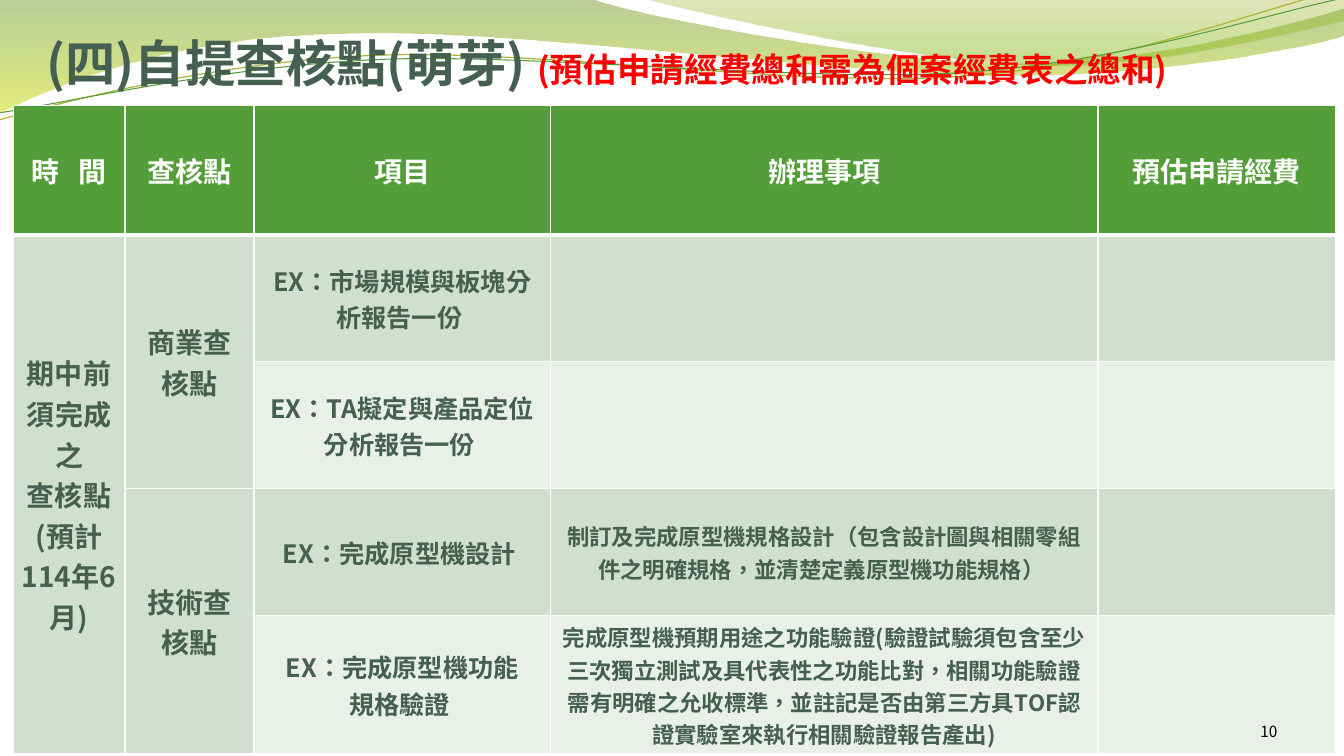
import pptx
import pptx.dml.color
import pptx.enum.lang
import pptx.enum.text
import pptx.oxml.ns
import pptx.util
from lxml import etree

Inches = pptx.util.Inches
Pt = pptx.util.Pt
RGBColor = pptx.dml.color.RGBColor
ALIGN = pptx.enum.text.PP_ALIGN
ANCHOR = pptx.enum.text.MSO_ANCHOR
LANGUAGE = pptx.enum.lang.MSO_LANGUAGE_ID.TRADITIONAL_CHINESE
qn = pptx.oxml.ns.qn

WHITE = RGBColor(0xFF, 0xFF, 0xFF)
BLACK = RGBColor(0, 0, 0)
RED = RGBColor(0xFF, 0, 0)
SLATE = RGBColor(0x45, 0x5F, 0x51)
GREEN = RGBColor(0x54, 0x9E, 0x39)
OLIVE = RGBColor(0xA9, 0xB7, 0x33)
BAND_DARK = RGBColor(0xD1, 0xDF, 0xCE)
BAND_LIGHT = RGBColor(0xE9, 0xF0, 0xE8)
LEAF = RGBColor(0x69, 0x92, 0x1C)
LIME = RGBColor(0xCC, 0xE1, 0x0F)
MOSS = RGBColor(0x9B, 0xAA, 0x1A)
GRASS = RGBColor(0x81, 0xBA, 0x16)

TC_FONT = "Noto Sans CJK TC"
SC_FONT = "Noto Sans CJK SC"

# Outlines: a pair is a line end, a group of six is a Bezier segment.
LEFT_WAVE = [(0, 0), (5.87, -0.01), (6.34, 0.17, 8.84, 0.63, 10.11, 0.63),
             (11.37, 0.63, 12.77, 0.26, 13.33, 0.09), (13.34, 0.36),
             (13.11, 0.44, 11.59, 0.76, 9.94, 0.75),
             (8.29, 0.75, 5.09, 0.28, 3.43, 0.34),
             (1.72, 0.36, 0.61, 0.83, -0.02, 1.13)]
RIGHT_WAVE = [(6.38, -0.01), (6.79, 0.11, 9.09, 0.62, 10.25, 0.65),
              (11.4, 0.69, 12.82, 0.32, 13.33, 0.21), (13.33, 0)]
OLIVE_STRAND = [(-0.01, 1.19), (0.63, 1.01, 2.1, 0.62, 3.69, 0.55),
                (5.27, 0.48, 7.89, 0.87, 9.49, 0.76),
                (11.1, 0.66, 12.51, 0.08, 13.3, -0.1)]
GREEN_STRAND = [(-0.01, 1.12), (0.62, 1.03, 2.18, 0.66, 3.77, 0.59),
                (5.37, 0.53, 7.96, 0.82, 9.55, 0.72),
                (11.14, 0.62, 12.55, 0.14, 13.33, -0.02)]

COLUMN_WIDTHS = [1.11, 1.28, 2.94, 5.43, 2.36]
ROW_HEIGHTS = [1.28, 1.26, 1.26, 1.26, 1.37]
MERGES = [(1, 0, 4, 0), (1, 1, 2, 1), (3, 1, 4, 1)]
COLUMN_SIZES = [20, 20, 18, 16, 18]
COLUMN_INSETS = [(0.07, 0), (0.1, 0)] + [(0.1, 0.05)] * 3
ROWS = [
    ["時 間", "查核點", "項目", "辦理事項", "預估申請經費"],
    ["期中前\n須完成之\n查核點\n(預計114年6月)", "商業查核點",
     "EX：市場規模與板塊分析報告一份 ", "", ""],
    ["", "", "EX：TA擬定與產品定位分析報告一份 ", "", ""],
    ["", "技術查核點", "EX：完成原型機設計 ",
     "制訂及完成原型機規格設計（包含設計圖與相關零組件之明確規格，並清楚定義原型機功能規格） ", ""],
    ["", "", "EX：完成原型機功能\n規格驗證 ",
     "完成原型機預期用途之功能驗證(驗證試驗須包含至少三次獨立測試及具代表性之功能比對，"
     "相關功能驗證需有明確之允收標準，並註記是否由第三方具TOF認證實驗室來執行相關驗證報告產出)", ""],
]


def set_attributes(target, values):
    for name, value in values.items():
        setattr(target, name, value)


def margins(left, top, right, bottom):
    sides = zip(("left", "top", "right", "bottom"), (left, top, right, bottom))
    return {f"margin_{side}": Inches(value) for side, value in sides}


class SlideBuilder:
    def __init__(self, presentation):
        self.slide = presentation.slides.add_slide(presentation.slide_layouts[6])

    def outline(self, outline, closed):
        """Draw through all points, then join each group of three into a curve."""
        points = [(round(segment[i] * 100), round(segment[i + 1] * 100))
                  for segment in outline for i in range(0, len(segment), 2)]
        builder = self.slide.shapes.build_freeform(*points[0], scale=Inches(0.01))
        builder.add_line_segments(points[1:], close=closed)
        shape = builder.convert_to_shape()
        shape.shadow.inherit = False
        line_ends = iter(list(shape.element.iter(qn("a:lnTo"))))
        for segment in outline[1:]:
            line = next(line_ends)
            if len(segment) == 6:
                line.addprevious(curve := etree.Element(qn("a:cubicBezTo")))
                for part in (line, next(line_ends), next(line_ends)):
                    curve.append(part[0])
                    part.getparent().remove(part)
        return shape

    def wave(self, outline, stops):
        """Filled outline; each stop is position, colour and opacity in percent."""
        shape = self.outline(outline, True)
        shape.line.fill.background()
        shape.fill.gradient()
        shape.fill.gradient_angle = 270
        stop_list = shape.element.spPr.find(qn("a:gradFill")).find(qn("a:gsLst"))
        for stop, (position, color, opacity) in zip(stop_list, stops):
            stop.set("pos", str(position * 1000))
            for child in list(stop):
                stop.remove(child)
            color_element = etree.SubElement(stop, qn("a:srgbClr"), val=str(color))
            etree.SubElement(color_element, qn("a:alpha"), val=str(opacity * 1000))

    def strand(self, outline, color, width):
        shape = self.outline(outline, False)
        shape.fill.background()
        shape.line.color.rgb = color
        shape.line.width = Pt(width)

    def run(self, paragraph, text, size, color, font=SC_FONT, bold=True):
        run = paragraph.add_run()
        run.text = text
        set_attributes(run.font, {"size": Pt(size), "bold": bold, "name": font,
                                  "language_id": LANGUAGE})
        run.font.color.rgb = color
        east_asian = etree.SubElement(run.font._element, qn("a:ea"))
        east_asian.set("typeface", font)
        return run

    def text(self, box, runs, align, top_margin=0):
        shape = self.slide.shapes.add_textbox(*(Inches(value) for value in box))
        frame = shape.text_frame
        set_attributes(frame, {"word_wrap": True, "vertical_anchor": ANCHOR.BOTTOM,
                               **margins(0, top_margin, 0, 0)})
        paragraph = frame.paragraphs[0]
        paragraph.alignment = align
        for values in runs:
            self.run(paragraph, *values)

    def borders(self, cell, widths):
        properties = cell._tc.get_or_add_tcPr()
        for side, width in zip("LRTB", widths):
            line = etree.SubElement(properties, qn(f"a:ln{side}"), w=str(Pt(width)))
            fill = etree.SubElement(line, qn("a:solidFill"))
            etree.SubElement(fill, qn("a:srgbClr"), val=str(WHITE))

    def cell(self, cell, row, column):
        is_header = row == 0
        self.borders(cell, (1, 1, 3 if row == 1 else 1, 3 if is_header else 1))
        cell.fill.solid()
        if is_header:
            cell.fill.fore_color.rgb = GREEN
        else:
            cell.fill.fore_color.rgb = BAND_DARK if column < 2 or row % 2 else BAND_LIGHT
        set_attributes(cell, {"vertical_anchor": ANCHOR.MIDDLE,
                              **margins(*COLUMN_INSETS[column] * 2)})
        if not ROWS[row][column]:
            return
        for index, line in enumerate(ROWS[row][column].split("\n")):
            frame = cell.text_frame
            paragraph = frame.add_paragraph() if index else frame.paragraphs[0]
            paragraph.alignment = ALIGN.CENTER
            run = self.run(paragraph, line, 20 if is_header else COLUMN_SIZES[column],
                           WHITE if is_header else SLATE)
            if is_header and column == 0:
                run.font._element.set("spc", "450")

    def table(self, left, top):
        box = (left, top, sum(COLUMN_WIDTHS), sum(ROW_HEIGHTS))
        table = self.slide.shapes.add_table(
            len(ROWS), len(COLUMN_WIDTHS), *(Inches(value) for value in box)).table
        for column, width in zip(table.columns, COLUMN_WIDTHS):
            column.width = Inches(width)
        for row, height in zip(table.rows, ROW_HEIGHTS):
            row.height = Inches(height)
        for first_row, first_column, last_row, last_column in MERGES:
            table.cell(first_row, first_column).merge(table.cell(last_row, last_column))
        for row in range(len(ROWS)):
            for column in range(len(COLUMN_WIDTHS)):
                self.cell(table.cell(row, column), row, column)


def main():
    presentation = pptx.Presentation()
    set_attributes(presentation, {"slide_width": Inches(13.33), "slide_height": Inches(7.5)})
    builder = SlideBuilder(presentation)
    builder.wave(LEFT_WAVE, [(0, LEAF, 45), (100, LIME, 55)])
    builder.wave(RIGHT_WAVE, [(0, MOSS, 30), (80, GRASS, 45)])
    builder.strand(OLIVE_STRAND, OLIVE, 0.85)
    builder.strand(GREEN_STRAND, GREEN, 0.75)
    builder.text((0.46, 0.15, 12, 0.77),
                 [("(四)自提查核點(萌芽) ", 36, SLATE, TC_FONT),
                  ("(預估申請經費總和需為個案經費表之總和)", 24, RED)], ALIGN.LEFT, 0.05)
    builder.table(0.13, 1.05)
    builder.text((11.56, 6.95, 1.11, 0.4), [("10", 11, BLACK, TC_FONT, False)], ALIGN.RIGHT)
    presentation.save("out.pptx")


if __name__ == "__main__":
    main()
